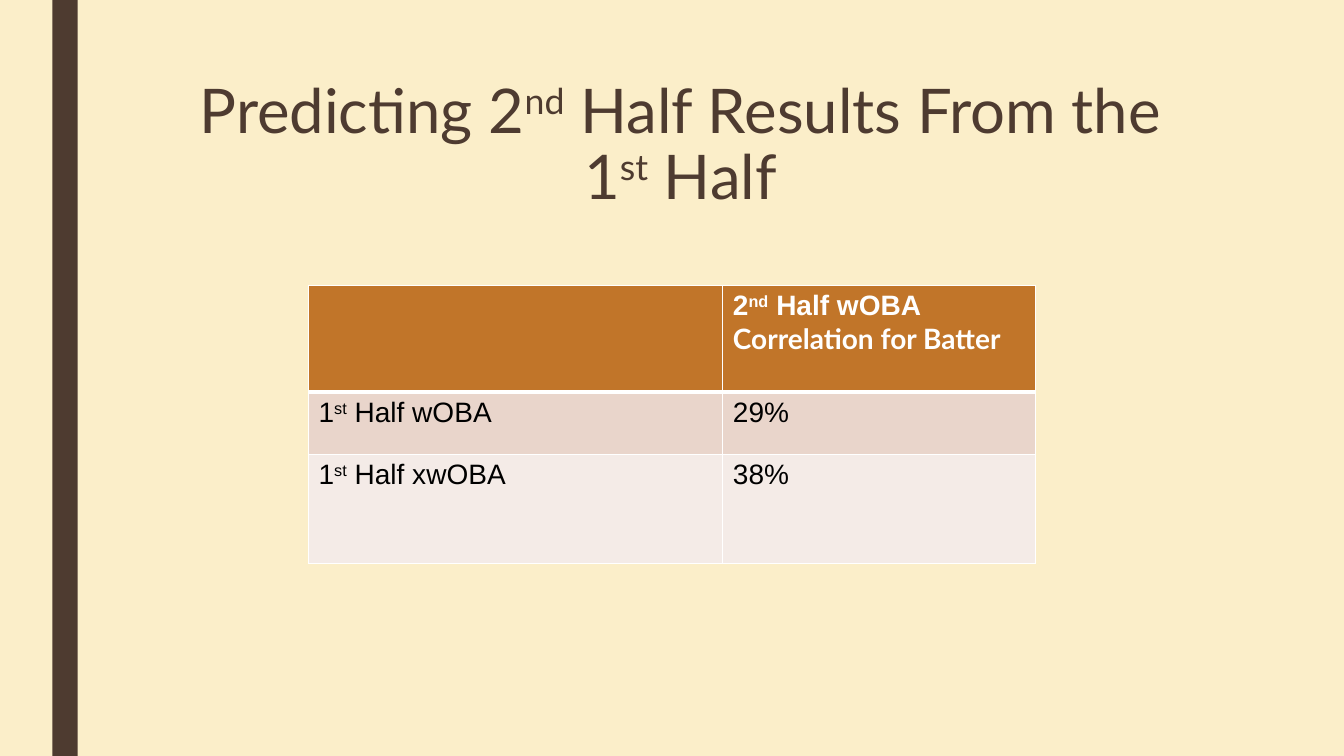
from dataclasses import dataclass

from lxml.etree import SubElement
from pptx import Presentation
from pptx.dml.color import RGBColor
from pptx.enum.shapes import MSO_SHAPE
from pptx.enum.text import MSO_ANCHOR, MSO_AUTO_SIZE, PP_ALIGN
from pptx.oxml.ns import qn
from pptx.table import _Cell
from pptx.text.text import _Paragraph
from pptx.util import Inches, Pt

CREAM = RGBColor(0xFB, 0xEE, 0xC9)
BROWN = RGBColor(0x4E, 0x3B, 0x30)
ORANGE = RGBColor(0xC1, 0x75, 0x29)
PINK = RGBColor(0xE9, 0xD5, 0xCB)
PALE_PINK = RGBColor(0xF4, 0xEB, 0xE7)
WHITE = RGBColor(0xFF, 0xFF, 0xFF)
BLACK = RGBColor(0, 0, 0)


@dataclass(frozen=True)
class Span:
    text: str
    font: str = "Arial"
    superscript: bool = False


@dataclass(frozen=True)
class Row:
    cells: tuple[tuple[Span, ...], ...]
    height: float
    fill: RGBColor
    color: RGBColor = BLACK
    bold: bool = False
    top_border: int = 1
    bottom_border: int = 1


def ordinal(number: str, suffix: str, rest: str, font: str = "Arial") -> tuple[Span, ...]:
    """Return spans for a number with a raised suffix and the words after it."""
    return Span(number, font), Span(suffix, font, True), Span(rest, font)


COLUMN_WIDTHS = (4.11, 3.1)
ROWS = (
    Row(((), ordinal("2", "nd", " Half wOBA ") + (Span("Correlation for Batter", "Lato"),)),
        1.06, ORANGE, WHITE, bold=True, bottom_border=3),
    Row((ordinal("1", "st", " Half wOBA"), (Span("29%"),)), 0.62, PINK, top_border=3),
    Row((ordinal("1", "st", " Half xwOBA"), (Span("38%"),)), 1.08, PALE_PINK),
)
TITLE = (ordinal("Predicting 2", "nd", " Half Results From the ", "Lato")
         + ordinal("1", "st", " Half", "Lato"))


def write_spans(paragraph: _Paragraph, spans: tuple[Span, ...], size: int,
                color: RGBColor, bold: bool = False) -> None:
    for span in spans:
        run = paragraph.add_run()
        run.text = span.text
        run.font.name = span.font
        run.font.size = Pt(size)
        run.font.bold = bold
        run.font.color.rgb = color
        if span.superscript:
            run.font._element.set("baseline", "30000")


def set_borders(cell: _Cell, top: int, bottom: int) -> None:
    properties = cell._tc.get_or_add_tcPr()
    for side, width in (("L", 1), ("R", 1), ("T", top), ("B", bottom)):
        line = SubElement(properties, qn(f"a:ln{side}"), w=str(Pt(width)))
        fill = SubElement(line, qn("a:solidFill"))
        SubElement(fill, qn("a:srgbClr"), val=str(WHITE))


def main() -> None:
    presentation = Presentation()
    presentation.slide_width = Inches(13.33)
    presentation.slide_height = Inches(7.5)
    slide = presentation.slides.add_slide(presentation.slide_layouts[5])
    slide.background.fill.solid()
    slide.background.fill.fore_color.rgb = CREAM

    side_bar = slide.shapes.add_shape(
        MSO_SHAPE.RECTANGLE, Inches(0.52), 0, Inches(0.25), Inches(7.5))
    side_bar.shadow.inherit = False
    side_bar.fill.solid()
    side_bar.fill.fore_color.rgb = BROWN
    side_bar.line.fill.background()

    title = slide.shapes.title
    title.left, title.top = Inches(1.5), Inches(0.75)
    title.width, title.height = Inches(10.5), Inches(1.62)
    title.text_frame.word_wrap = True
    title.text_frame.auto_size = MSO_AUTO_SIZE.NONE
    title.text_frame.vertical_anchor = MSO_ANCHOR.TOP
    paragraph = title.text_frame.paragraphs[0]
    paragraph.alignment = PP_ALIGN.CENTER
    paragraph.line_spacing = 0.89
    write_spans(paragraph, TITLE, 44, BROWN)

    table = slide.shapes.add_table(
        len(ROWS), len(COLUMN_WIDTHS), Inches(3.06), Inches(2.83),
        Inches(sum(COLUMN_WIDTHS)), Inches(sum(row.height for row in ROWS))).table
    for column, width in zip(table.columns, COLUMN_WIDTHS):
        column.width = Inches(width)
    for table_row, row in zip(table.rows, ROWS):
        table_row.height = Inches(row.height)
        for cell, spans in zip(table_row.cells, row.cells):
            set_borders(cell, row.top_border, row.bottom_border)
            cell.fill.solid()
            cell.fill.fore_color.rgb = row.fill
            write_spans(cell.text_frame.paragraphs[0], spans, 20, row.color, row.bold)

    presentation.save("out.pptx")


if __name__ == "__main__":
    main()
